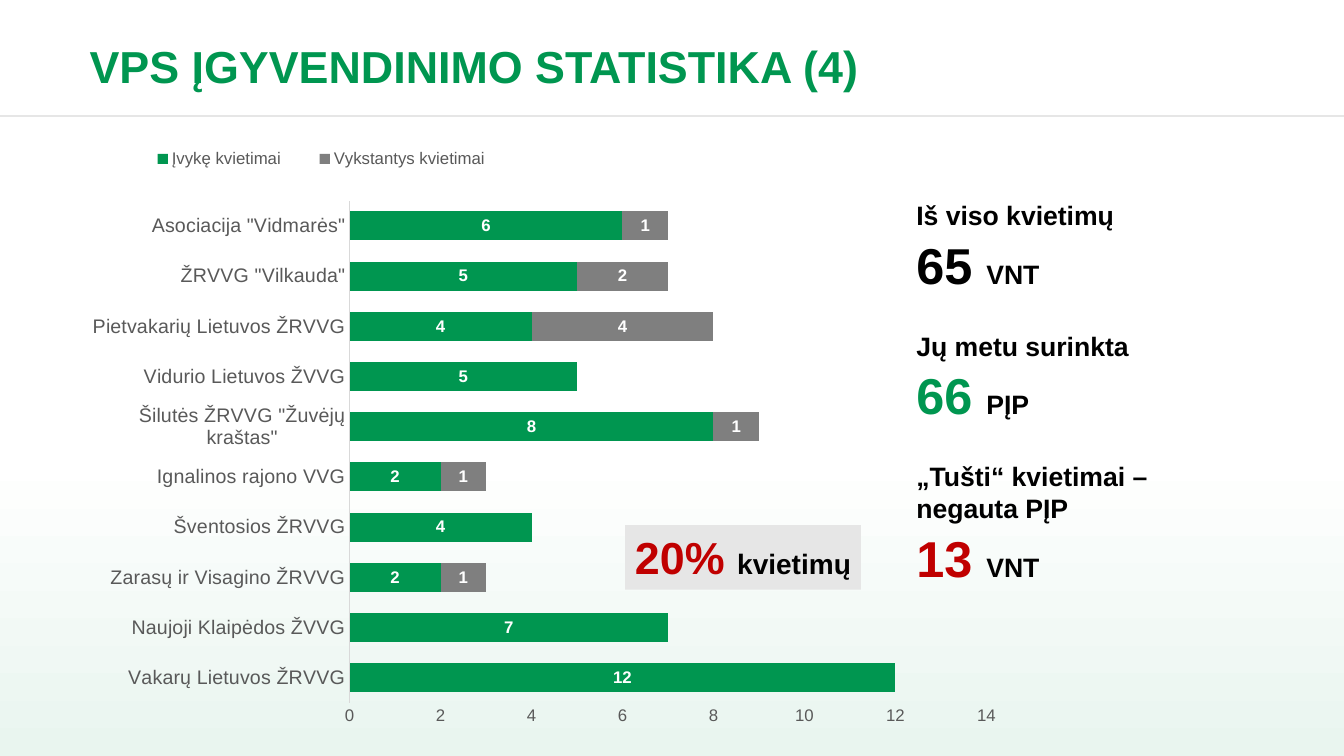
from lxml import etree
from pptx import Presentation
from pptx.chart.data import CategoryChartData
from pptx.dml.color import RGBColor as RGB
from pptx.enum.chart import XL_CHART_TYPE as CT, XL_LEGEND_POSITION as LP, XL_TICK_MARK as TM
from pptx.enum.dml import MSO_FILL
from pptx.enum.shapes import MSO_CONNECTOR as MC, MSO_SHAPE as MS
from pptx.enum.text import MSO_ANCHOR as MA, PP_ALIGN as PA
from pptx.oxml import parse_xml
from pptx.oxml.ns import nsdecls, qn
from pptx.util import Inches, Pt

THEME = {
    "font": "Arial",
    "green": RGB(0x00, 0x96, 0x50), "gray": RGB(0x7F, 0x7F, 0x7F),
    "red": RGB(0xC0, 0x00, 0x00), "black": RGB(0, 0, 0), "white": RGB(255, 255, 255),
    "mint": RGB(0xE9, 0xF5, 0xEF), "pale": RGB(0xE6, 0xE6, 0xE6),
    "axis": RGB(0xD9, 0xD9, 0xD9), "label": RGB(0x59, 0x59, 0x59),
    "title": 32, "number": 36, "text": 19, "callout": 20, "category": 14, "small": 12,
}

prs = Presentation()
prs.slide_width, prs.slide_height = Inches(13.33), Inches(7.5)
s = prs.slides.add_slide(prs.slide_layouts[6])


def box(x, y, w, h):
    """Turn percentages of the slide into a left, top, width, height."""
    W, H = prs.slide_width, prs.slide_height
    return [int(v * side / 100) for v, side in ((x, W), (y, H), (w, W), (h, H))]


def style(font, size, color, bold=None):
    font.name, font.size, font.bold = THEME["font"], Pt(THEME[size]), bold
    font.color.rgb = THEME[color]


# Background fading to mint at the bottom
sp = s.shapes.add_shape(MS.RECTANGLE, *box(0, 0, 100, 100))
sp.shadow.inherit = False
sp.line.fill.background()
sp.fill.gradient()
sp.fill.gradient_angle = 270
for stop, color, position in zip(sp.fill.gradient_stops, ("white", "mint"), (0.6, 1)):
    stop.color.rgb, stop.position = THEME[color], position

# Title and rule
x, y, w, h = box(0, 15.33, 100, 0)
rule = s.shapes.add_connector(MC.STRAIGHT, x, y, x + w, y)
rule.line.color.rgb, rule.line.width = THEME["pale"], Pt(1)
etree.SubElement(rule.element.spPr, qn("a:effectLst"))
tf = s.shapes.add_textbox(*box(5.93, 3.2, 80.12, 12.27)).text_frame
tf.word_wrap, tf.vertical_anchor = True, MA.MIDDLE
p = tf.paragraphs[0]
p.text, p.line_spacing = "VPS ĮGYVENDINIMO STATISTIKA (4)", 0.8
style(p.font, "title", "green", True)

# Chart of calls per group: finished, ongoing
calls = [
    ("Vakarų Lietuvos ŽRVVG", 12, None),
    ("Naujoji Klaipėdos ŽVVG", 7, None),
    ("Zarasų ir Visagino ŽRVVG", 2, 1),
    ("Šventosios ŽRVVG", 4, None),
    ("Ignalinos rajono VVG", 2, 1),
    ('Šilutės ŽRVVG "Žuvėjų kraštas"', 8, 1),
    ("Vidurio Lietuvos ŽVVG", 5, None),
    ("Pietvakarių Lietuvos ŽRVVG", 4, 4),
    ('ŽRVVG "Vilkauda"', 5, 2),
    ('Asociacija "Vidmarės"', 6, 1),
]
groups, finished, ongoing = zip(*calls)
data = CategoryChartData()
data.categories = groups
data.add_series("Įvykę kvietimai", finished)
data.add_series("Vykstantys kvietimai", ongoing)
chart = s.shapes.add_chart(CT.BAR_STACKED, *box(5.1, 17.87, 69.69, 79.07), data).chart
chart.has_title = False
style(chart.font, "small", "label")
plot = chart.plots[0]
plot.gap_width, plot.overlap, plot.vary_by_categories = 72, 100, False
for series, color in zip(plot.series, ("green", "gray")):
    series.format.fill.solid()
    series.format.fill.fore_color.rgb = THEME[color]
    labels = series.data_labels
    labels.show_value = True
    style(labels.font, "small", "white", True)

# Axes and legend
for axis, size in ((chart.category_axis, "category"), (chart.value_axis, "small")):
    axis.has_major_gridlines = False
    axis.major_tick_mark = axis.minor_tick_mark = TM.NONE
    style(axis.tick_labels.font, size, "label")
chart.category_axis.format.line.color.rgb = THEME["axis"]
chart.category_axis.format.line.width = Pt(0.75)
axis = chart.value_axis
axis.format.line.fill.background()
axis.minimum_scale, axis.maximum_scale, axis.major_unit = 0, 14, 2
chart.has_legend = True
chart.legend.position, chart.legend.include_in_layout = LP.TOP, False
style(chart.legend.font, "small", "label")

# Fixed places of the plot area and the legend inside the chart
plot_area = chart.element.chart.plotArea
legend = chart.legend._element
for old in plot_area.findall(qn("c:layout")) + legend.findall(qn("c:layout")):
    old.getparent().remove(old)
for part, index, target, place in (
    (plot_area, 0, '<c:layoutTarget val="inner"/>', (0.3, 0.11, 0.68, 0.84)),
    (legend, 1, "", (0.06, 0.01, 0.42, 0.06)),
):
    modes = "".join(f'<c:{k}Mode val="edge"/>' for k in "xy")
    sizes = "".join(f'<c:{k} val="{v}"/>' for k, v in zip("xywh", place))
    part.insert(index, parse_xml(
        f'<c:layout {nsdecls("c")}><c:manualLayout>{target}{modes}{sizes}'
        "</c:manualLayout></c:layout>"))

# Key figures
facts = [
    ("Iš viso kvietimų", "65 ", "VNT", "black", 16.95, 14.13),
    ("Jų metu surinkta", "66 ", "PĮP", "green", 21.6, 14.13),
    ("„Tušti“ kvietimai – negauta PĮP", "13 ", "VNT", "red", 19.58, 18.4),
]
for i, (heading, number, unit, color, width, height) in enumerate(facts):
    tf = s.shapes.add_textbox(*box(67.44, 25.7 + 17.25 * i, width, height)).text_frame
    tf.word_wrap = True
    p = tf.paragraphs[0]
    p.text = heading
    style(p.font, "text", "black", True)
    p = tf.add_paragraph()
    p.space_before = Pt(2)
    for text, size, tint in ((number, "number", color), (unit, "text", "black")):
        r = p.add_run()
        r.text = text
        style(r.font, size, tint, True)

# Callout with the share of empty calls
sp = s.shapes.add_shape(MS.RECTANGLE, *box(46.51, 69.47, 17.55, 8.53))
sp.shadow.inherit = False
sp.fill.solid()
sp.fill.fore_color.rgb = THEME["pale"]
sp.line.fill.background()
tf = sp.text_frame
tf.word_wrap, tf.vertical_anchor = False, MA.TOP
p = tf.paragraphs[0]
p.alignment = PA.LEFT
for text, size, color in (("20% ", "title", "red"), ("kvietimų", "callout", "black")):
    r = p.add_run()
    r.text = text
    style(r.font, size, color, True)

prs.save("out.pptx")
